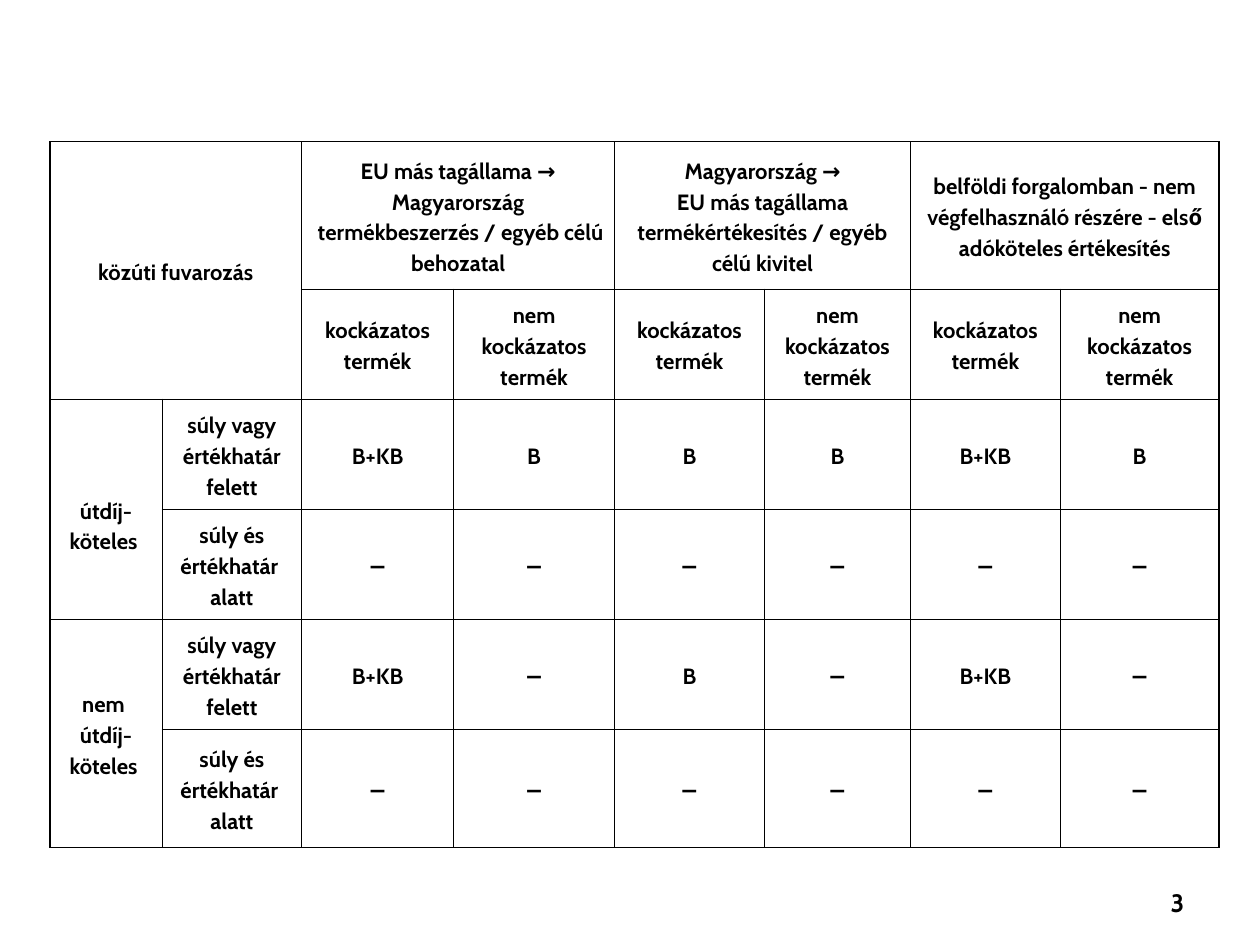
from dataclasses import dataclass

from lxml.etree import SubElement
from pptx import Presentation
from pptx.dml.color import RGBColor
from pptx.enum.text import MSO_ANCHOR as Anchor, PP_ALIGN as Align
from pptx.oxml.ns import qn
from pptx.text.text import _Paragraph as Paragraph
from pptx.table import Table, _Cell as TableCell
from pptx.util import Inches, Pt

FONT = "Cabin"
BLACK = "000000"
COL_WIDTHS = [0.99, 1.23, 1.34, 1.42, 1.32, 1.29, 1.32, 1.4]
ROW_HEIGHTS = [1.3, 0.97, 0.97, 0.97, 0.97, 1.04]
PRODUCT_KINDS = ["kockázatos termék", "nem kockázatos termék"]
LIMITS = ["súly vagy értékhatár felett", "súly és értékhatár \nalatt"]
REPORTS = [
    ["B+KB", "B", "B", "B", "B+KB", "B"],
    ["−"] * 6,
    ["B+KB", "−", "B", "−", "B+KB", "−"],
    ["−"] * 6,
]


@dataclass
class Entry:
    row: int
    col: int
    text: str
    rows: int = 1
    cols: int = 1
    top: float = 0


HEADINGS = [
    Entry(0, 0, "közúti fuvarozás", 2, 2),
    Entry(0, 2, "EU más tagállama → Magyarország\n"
                " termékbeszerzés / egyéb célú behozatal", cols=2),
    Entry(0, 4, "Magyarország →\n"
                "EU más tagállama termékértékesítés / egyéb célú kivitel", cols=2),
    Entry(0, 6, "belföldi forgalomban - nem végfelhasználó részére"
                " - első adóköteles értékesítés", cols=2),
    Entry(2, 0, "útdíj-\nköteles ", rows=2, top=0.27),
    Entry(4, 0, "nem \nútdíj-\nköteles ", rows=2),
]


def rgb(color: str) -> RGBColor:
    return RGBColor.from_string(color)


def style(p: Paragraph, size: float, align: Align) -> None:
    p.alignment = align
    p.font.name = FONT
    p.font.size = Pt(size)
    p.font.bold = True
    p.font.color.rgb = rgb(BLACK)


def add_borders(cell: TableCell) -> None:
    """Give the cell a thin black line on all four sides and no fill."""
    tc_pr = cell._tc.get_or_add_tcPr()
    for side in ("lnL", "lnR", "lnT", "lnB"):
        ln = SubElement(tc_pr, qn(f"a:{side}"), w=str(Pt(1)))
        SubElement(SubElement(ln, qn("a:solidFill")), qn("a:srgbClr"), val=BLACK)
    cell.fill.background()


def write_entry(table: Table, entry: Entry) -> None:
    cell = table.cell(entry.row, entry.col)
    if entry.rows > 1 or entry.cols > 1:
        cell.merge(table.cell(entry.row + entry.rows - 1, entry.col + entry.cols - 1))
    cell.margin_left = cell.margin_right = Inches(0.05)
    cell.margin_top, cell.margin_bottom = Inches(entry.top), Inches(0)
    cell.vertical_anchor = Anchor.MIDDLE
    cell.text = entry.text
    for p in cell.text_frame.paragraphs:
        style(p, 14, Align.CENTER)
        p.line_spacing = 1.15


def main() -> None:
    prs = Presentation()
    prs.slide_width, prs.slide_height = Inches(11.11), Inches(8.33)
    s = prs.slides.add_slide(prs.slide_layouts[6])

    frame = s.shapes.add_table(len(ROW_HEIGHTS), len(COL_WIDTHS), Inches(0.44),
                               Inches(1.25), Inches(sum(COL_WIDTHS)),
                               Inches(sum(ROW_HEIGHTS)))
    table = frame.table
    table.first_row = table.horz_banding = False
    for column, width in zip(table.columns, COL_WIDTHS):
        column.width = Inches(width)
    for row, height in zip(table.rows, ROW_HEIGHTS):
        row.height = Inches(height)
    for cell in table.iter_cells():
        add_borders(cell)

    entries = HEADINGS + [Entry(1, c, PRODUCT_KINDS[c % 2]) for c in range(2, 8)]
    for r, reports in enumerate(REPORTS, start=2):
        entries.append(Entry(r, 1, LIMITS[r % 2]))
        entries += [Entry(r, c, text) for c, text in enumerate(reports, start=2)]
    for entry in entries:
        write_entry(table, entry)

    sp = s.shapes.add_textbox(Inches(9.23), Inches(7.76), Inches(1.32), Inches(0.58))
    tf = sp.text_frame
    tf.word_wrap = True
    tf.margin_left = tf.margin_right = Inches(0.11)
    tf.margin_top = tf.margin_bottom = Inches(0.06)
    tf.text = "3"
    style(tf.paragraphs[0], 16, Align.RIGHT)

    prs.save("out.pptx")


if __name__ == "__main__":
    main()
